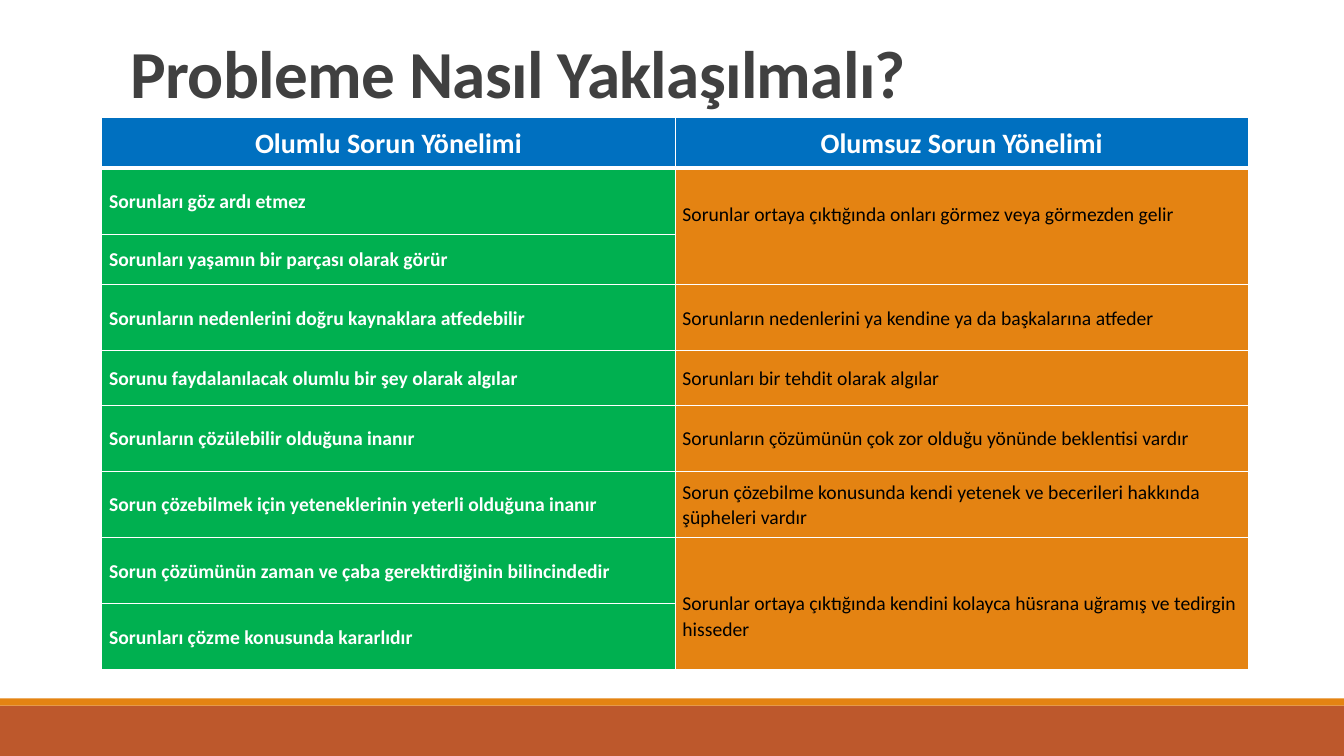
from lxml.etree import SubElement
from pptx import Presentation
from pptx.dml.color import RGBColor
from pptx.enum.shapes import MSO_SHAPE
from pptx.enum.text import MSO_ANCHOR, PP_ALIGN
from pptx.oxml.ns import qn
from pptx.util import Pt

PX = 9525  # EMU in one px, 96 px to the inch
WIDTH, HEIGHT = 1280, 720
FONT = "Calibri"
WHITE, BLACK, GREY = "FFFFFF", "000000", "404040"
BLUE, GREEN, ORANGE, RUST = "0070C0", "00B050", "E48312", "BD582C"

ROW_HEIGHTS = [48, 63, 48, 63, 52, 63, 63, 63, 63]
HEADERS = ["Olumlu Sorun Yönelimi", "Olumsuz Sorun Yönelimi"]
POSITIVE = [
    "Sorunları göz ardı etmez",
    "Sorunları yaşamın bir parçası olarak görür",
    "Sorunların nedenlerini doğru kaynaklara atfedebilir",
    "Sorunu faydalanılacak olumlu bir şey olarak algılar",
    "Sorunların çözülebilir olduğuna inanır",
    "Sorun çözebilmek için yeteneklerinin yeterli olduğuna inanır",
    "Sorun çözümünün zaman ve çaba gerektirdiğinin bilincindedir",
    "Sorunları çözme konusunda kararlıdır",
]
# (text, rows spanned, top inset, bottom inset)
NEGATIVE = [
    ("Sorunlar ortaya çıktığında onları görmez veya görmezden gelir", 2, 0, 24),
    ("Sorunların nedenlerini ya kendine ya da başkalarına atfeder", 1, 0, 0),
    ("Sorunları bir tehdit olarak algılar", 1, 0, 0),
    ("Sorunların çözümünün çok zor olduğu yönünde beklentisi vardır", 1, 0, 0),
    ("Sorun çözebilme konusunda kendi yetenek ve becerileri hakkında "
     "şüpheleri vardır", 1, 0, 0),
    ("Sorunlar ortaya çıktığında kendini kolayca hüsrana uğramış ve tedirgin "
     "hisseder", 2, 24, 0),
]


def px(*lengths):
    return [n * PX for n in lengths]


def color(value):
    return RGBColor.from_string(value)


def write(tf, text, size=14, fill=WHITE, bold=False, align=PP_ALIGN.LEFT,
          spacing=1.07, tracking=None):
    tf.word_wrap = True
    p = tf.paragraphs[0]
    p.alignment, p.line_spacing = align, spacing
    r = p.add_run()
    r.text = text
    r.font.name, r.font.size, r.font.bold = FONT, Pt(size), bold
    r.font.color.rgb = color(fill)
    if tracking is not None:
        r.font._element.set("spc", str(tracking))


def add_band(s, box, fill):
    sp = s.shapes.add_shape(MSO_SHAPE.RECTANGLE, *px(*box))
    sp.shadow.inherit = False
    sp.fill.solid()
    sp.fill.fore_color.rgb = color(fill)
    sp.line.fill.background()


def add_footer(s, x, y, w, h):
    stripe = 7
    add_band(s, (x, y + stripe, w, h - stripe), RUST)
    add_band(s, (x, y, w, stripe), ORANGE)


def add_title(s, *box):
    tf = s.shapes.add_textbox(*px(*box)).text_frame
    tf.vertical_anchor = MSO_ANCHOR.BOTTOM
    write(tf, "Probleme Nasıl Yaklaşılmalı?", size=48, fill=GREY, bold=True,
          spacing=0.85, tracking=-50)


def style_cell(cell, fill, top=1, bottom=1):
    tcPr = cell._tc.get_or_add_tcPr()
    for side, width in (("L", 1), ("R", 1), ("T", top), ("B", bottom)):
        ln = SubElement(tcPr, qn(f"a:ln{side}"), w=str(Pt(width)))
        solid = SubElement(ln, qn("a:solidFill"))
        SubElement(solid, qn("a:srgbClr"), val=WHITE)
    cell.fill.solid()
    cell.fill.fore_color.rgb = color(fill)
    cell.vertical_anchor = MSO_ANCHOR.MIDDLE
    cell.margin_left = cell.margin_right = 7 * PX
    cell.margin_top = cell.margin_bottom = 0


def add_comparison(s, x, y, w, h):
    table = s.shapes.add_table(len(ROW_HEIGHTS), 2, *px(x, y, w, h)).table
    table.horz_banding = False
    for row, height in zip(table.rows, ROW_HEIGHTS):
        row.height = height * PX
    for col in table.columns:
        col.width = w // 2 * PX

    # Header row
    for c, text in enumerate(HEADERS):
        cell = table.cell(0, c)
        style_cell(cell, BLUE, bottom=3)
        write(cell.text_frame, text, size=20, bold=True, align=PP_ALIGN.CENTER)

    # Body colours and the positive column
    for i, text in enumerate(POSITIVE, 1):
        top = 3 if i == 1 else 1
        style_cell(table.cell(i, 0), GREEN, top)
        style_cell(table.cell(i, 1), ORANGE, top)
        write(table.cell(i, 0).text_frame, text, bold=True)

    # Negative column, with its merged cells
    i = 1
    for text, span, inset_top, inset_bottom in NEGATIVE:
        cell = table.cell(i, 1)
        if span > 1:
            cell.merge(table.cell(i + span - 1, 1))
        cell.margin_top, cell.margin_bottom = px(inset_top, inset_bottom)
        write(cell.text_frame, text, fill=BLACK)
        i += span


def main():
    prs = Presentation()
    prs.slide_width, prs.slide_height = px(WIDTH, HEIGHT)
    s = prs.slides.add_slide(prs.slide_layouts[6])
    add_footer(s, 0, 665, WIDTH, 55)
    add_title(s, 115, 30, 1056, 82)
    add_comparison(s, 97, 112, 1092, sum(ROW_HEIGHTS))
    prs.save("out.pptx")


if __name__ == "__main__":
    main()
